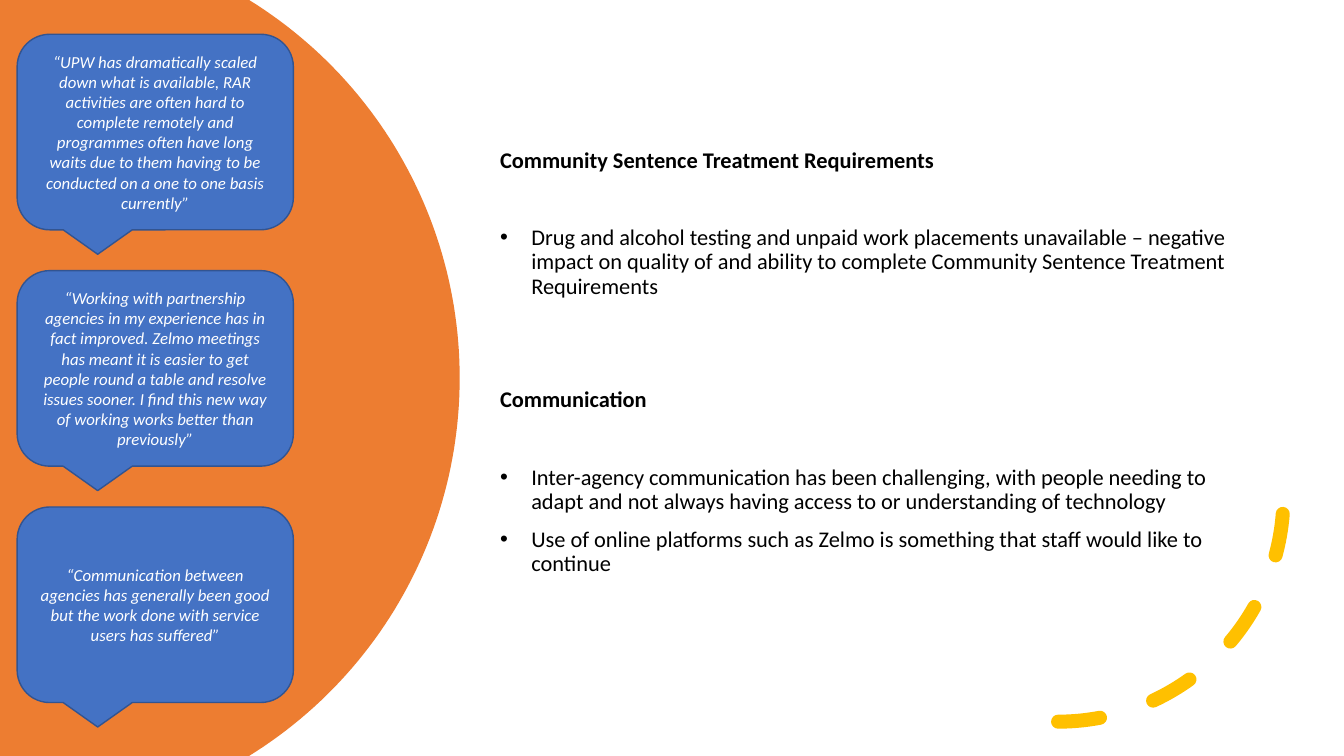
"""Build a slide on sentence requirements and communication with three quotes."""
from math import asin, cos, sin

from lxml import etree
from pptx import Presentation
from pptx.dml.color import RGBColor
from pptx.enum.dml import MSO_LINE
from pptx.enum.shapes import MSO_SHAPE
from pptx.enum.text import MSO_ANCHOR, MSO_AUTO_SIZE, PP_ALIGN
from pptx.oxml.ns import qn
from pptx.util import Inches, Pt

ARC, CALLOUT = MSO_SHAPE.ARC, MSO_SHAPE.ROUNDED_RECTANGULAR_CALLOUT
DASH = MSO_LINE.DASH
MIDDLE, NO_FIT = MSO_ANCHOR.MIDDLE, MSO_AUTO_SIZE.NONE
LEFT, CENTER = PP_ALIGN.LEFT, PP_ALIGN.CENTER

QUOTES = [
    "“UPW has dramatically scaled down what is available, RAR activities are often hard to complete remotely and programmes often have long waits due to them having to be conducted on a one to one basis currently”",
    "“Working with partnership agencies in my experience has in fact improved. Zelmo meetings has meant it is easier to get people round a table and resolve issues sooner. I find this new way of working works better than previously”",
    "“Communication between agencies has generally been good but the work done with service users has suffered”",
]
# Each entry: text, is a heading, points of space before
BODY = [
    ("Community Sentence Treatment Requirements", True, 10),
    ("Drug and alcohol testing and unpaid work placements unavailable – negative impact on quality of and ability to complete Community Sentence Treatment Requirements", False, 38),
    ("Communication", True, 64),
    ("Inter-agency communication has been challenging, with people needing to adapt and not always having access to or understanding of technology", False, 38),
    ("Use of online platforms such as Zelmo is something that staff would like to continue", False, 10),
]


def rgb(value):
    return RGBColor.from_string(value)


def style(p, size, color, bold=False, italic=False):
    for r in p.runs:
        r.font.name = "Calibri"
        r.font.size = Pt(size)
        r.font.color.rgb = rgb(color)
        r.font.bold = bold
        r.font.italic = italic


prs = Presentation()
prs.slide_width = Inches(13.33)
prs.slide_height = Inches(7.5)
s = prs.slides.add_slide(prs.slide_layouts[1])
title = s.shapes.title._element
title.getparent().remove(title)

radius, center_x, center_y = 4.41, 0.15, 3.75
half_angle = asin(center_y / radius)
steps = 100
angles = [half_angle * (2 * i / steps - 1) for i in range(steps + 1)]
curve = [(Inches(center_x + radius * cos(a)), Inches(center_y + radius * sin(a))) for a in angles]
builder = s.shapes.build_freeform(0, 0)
builder.add_line_segments(curve + [(0, Inches(7.5))], close=True)
disc = builder.convert_to_shape()
disc.shadow.inherit = False
disc.fill.solid()
disc.fill.fore_color.rgb = rgb("ED7D31")
disc.line.fill.background()

arc = s.shapes.add_shape(ARC, Inches(8.26), Inches(2.69), Inches(4.47), Inches(4.47))
arc.shadow.inherit = False
arc.fill.background()
arc.line.color.rgb = rgb("FFC000")
arc.line.width = Pt(10)
arc.line.dash_style = DASH
arc._element.spPr.find(qn("a:xfrm")).set("flipV", "1")
arc._element.spPr.find(qn("a:ln")).set("cap", "rnd")

body = s.placeholders[1]
body.left, body.top = Inches(4.86), Inches(0.74)
body.width, body.height = Inches(7.55), Inches(6.02)
tf = body.text_frame
tf.word_wrap = True
tf.auto_size = NO_FIT
tf.vertical_anchor = MIDDLE
tf.margin_bottom = Inches(0.35)
tf.text = "\n".join(text for text, heading, gap in BODY)
for p, (text, heading, gap) in zip(tf.paragraphs, BODY):
    p.alignment = LEFT
    p.line_spacing = 0.9
    p.space_before = Pt(gap)
    style(p, 16, "000000", bold=heading)
    pPr = p._p.get_or_add_pPr()
    indent = 0 if heading else Inches(0.31)
    pPr.set("marL", str(indent))
    pPr.set("indent", str(-indent))
    if heading:
        etree.SubElement(pPr, qn("a:buNone"))
    else:
        etree.SubElement(pPr, qn("a:buFont")).set("typeface", "Arial")
        etree.SubElement(pPr, qn("a:buChar")).set("char", "•")

for i, quote in enumerate(QUOTES):
    top = 0.34 + 2.345 * i
    sp = s.shapes.add_shape(CALLOUT, Inches(0.17), Inches(top), Inches(2.74), Inches(1.94))
    sp.shadow.inherit = False
    sp.fill.solid()
    sp.fill.fore_color.rgb = rgb("4472C4")
    sp.line.color.rgb = rgb("325491")
    sp.line.width = Pt(1)
    tf = sp.text_frame
    tf.word_wrap = True
    tf.vertical_anchor = MIDDLE
    tf.margin_left = tf.margin_right = Inches(0.12)
    tf.text = quote
    p = tf.paragraphs[0]
    p.alignment = CENTER
    style(p, 12, "FFFFFF", italic=True)

prs.save("out.pptx")
